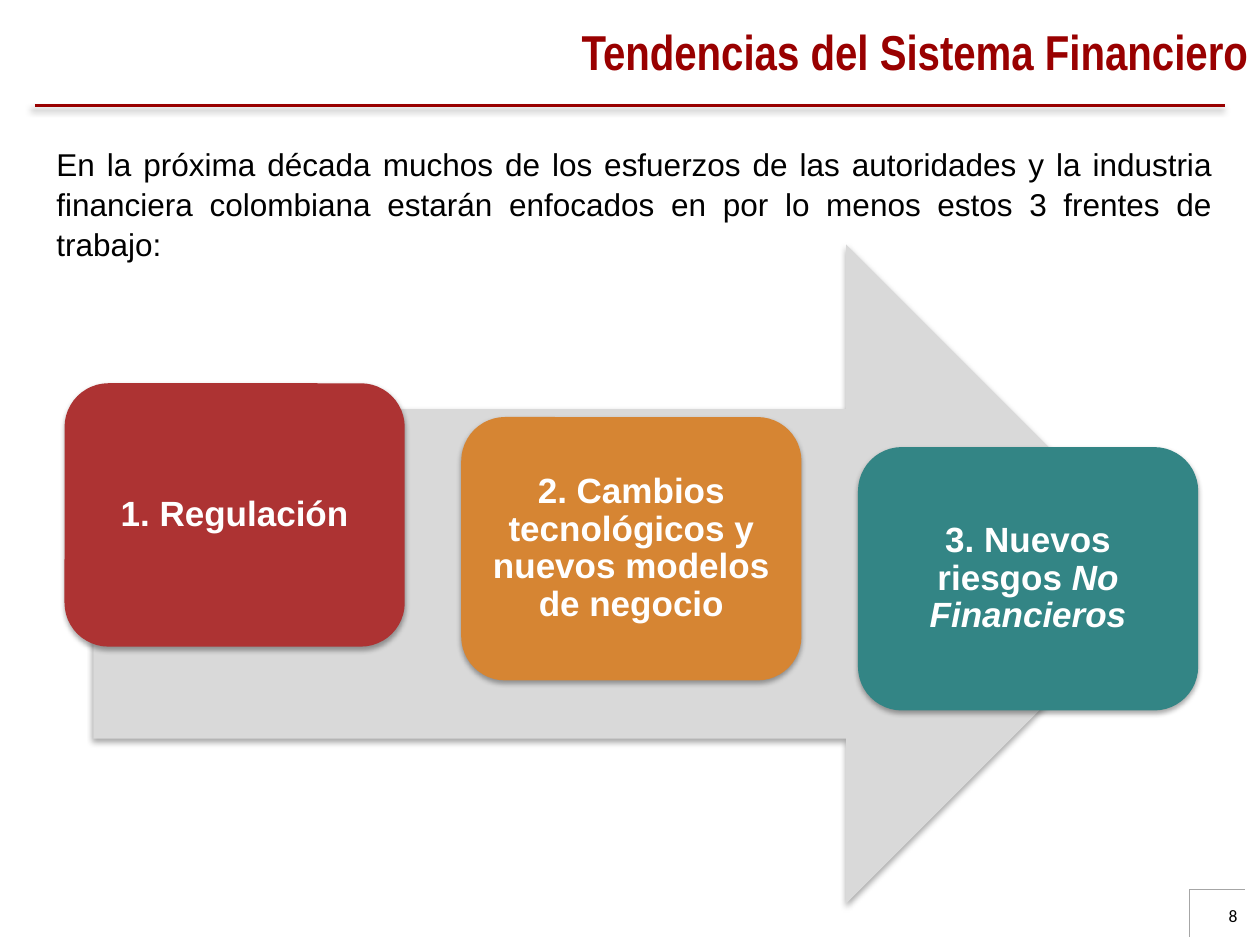
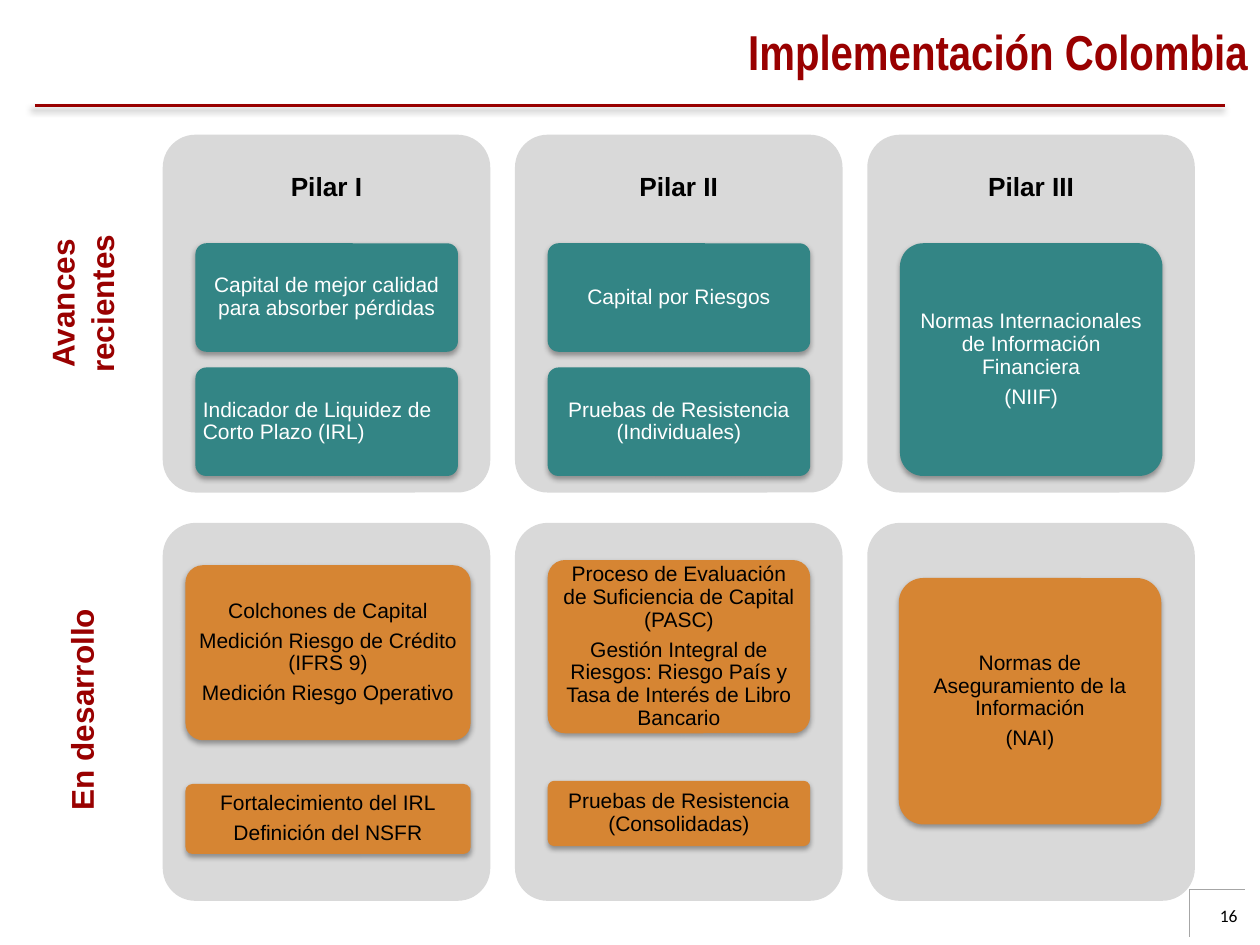
from lxml import etree
from pptx import Presentation
from pptx.dml.color import RGBColor
from pptx.enum import shapes, text
from pptx.oxml import ns
from pptx.util import Pt

RED = RGBColor(0x99, 0x00, 0x00)
BRICK = RGBColor(0xAD, 0x33, 0x33)
ORANGE = RGBColor(0xD6, 0x85, 0x33)
TEAL = RGBColor(0x33, 0x85, 0x85)
PALE_GRAY = RGBColor(0xD9, 0xD9, 0xD9)
RULE_GRAY = RGBColor(0xA6, 0xA6, 0xA6)
BLACK = RGBColor(0, 0, 0)
WHITE = RGBColor(255, 255, 255)
LEFT, CENTER = text.PP_ALIGN.LEFT, text.PP_ALIGN.CENTER
RIGHT, JUSTIFY = text.PP_ALIGN.RIGHT, text.PP_ALIGN.JUSTIFY
MIDDLE = text.MSO_ANCHOR.MIDDLE

# Shadows: opacity %, blur, distance (points), direction (degrees)
CARD_SHADOW = (35, 3.1, 1.8, 90)
RULE_SHADOW = (40, 4, 3, 135)

# ---- Content ----
TRENDS_TITLE = "Tendencias del Sistema Financiero"
TRENDS_INTRO = (
    "En la próxima década muchos de los esfuerzos de las autoridades y la "
    "industria financiera colombiana estarán enfocados en por lo menos estos "
    "3 frentes de trabajo:"
)
# Top, fill, plain text, italic text
FRONTS = [
    (219, BRICK, "1. Regulación", ""),
    (238.3, ORANGE, "2. Cambios tecnológicos y nuevos modelos de negocio", ""),
    (255.5, TEAL, "3. Nuevos riesgos ", "No Financieros"),
]

PILLARS_TITLE = "Implementación Colombia"
PILLARS = ["Pilar I", "Pilar II", "Pilar III"]
# Cards per pillar: inset from the panel, top, width, height, paragraphs
ADVANCES = [
    [(18.7, 139, 150, 62, ["Capital de mejor calidad para absorber pérdidas"]),
     (18.7, 210, 150, 62, ["Indicador de Liquidez de Corto Plazo (IRL)"])],
    [(18.7, 139, 150, 62, ["Capital por Riesgos"]),
     (18.7, 210, 150, 62, ["Pruebas de Resistencia (Individuales)"])],
    [(18.7, 139, 150, 133,
      ["Normas Internacionales de Información Financiera", "(NIIF)"])],
]
DEVELOPMENTS = [
    [(13, 323, 163, 100,
      ["Colchones de Capital", "Medición Riesgo de Crédito (IFRS 9)",
       "Medición Riesgo Operativo"]),
     (13, 448, 163, 40, ["Fortalecimiento del IRL", "Definición del NSFR"])],
    [(18.7, 320, 150, 99,
      ["Proceso de Evaluación de Suficiencia de Capital (PASC)",
       "Gestión Integral de Riesgos: Riesgo País y Tasa de Interés de Libro "
       "Bancario"]),
     (18.7, 446.2, 150, 37.3, ["Pruebas de Resistencia (Consolidadas)"])],
    [(18, 330.3, 150, 140.8,
      ["Normas de Aseguramiento de la Información", "(NAI)"])],
]
LEFT_ALIGNED = {"Indicador de Liquidez de Corto Plazo (IRL)"}
# Panel top, panel height, card fill, text colour, cards
PANEL_ROWS = [
    (77, 204.5, TEAL, WHITE, ADVANCES),
    (298.8, 216, ORANGE, BLACK, DEVELOPMENTS),
]
# Box of each vertical label and its lines
ROW_LABELS = [
    ((20, 100, 58.5, 147), ["Avances", "recientes"]),
    ((31, 332, 36, 147), ["En desarrollo"]),
]


# ---- Drawing helpers ----
def add_shadow(properties, shadow=None):
    """Set the effect list of a shape: empty, or one outer shadow."""
    effects = properties.find(ns.qn("a:effectLst"))
    if effects is None:
        effects = etree.SubElement(properties, ns.qn("a:effectLst"))
    if shadow:
        opacity, blur, distance, direction = shadow
        outer = etree.SubElement(
            effects, ns.qn("a:outerShdw"), blurRad=str(int(Pt(blur))),
            dist=str(int(Pt(distance))), dir=str(direction * 60000),
            rotWithShape="0")
        color = etree.SubElement(outer, ns.qn("a:srgbClr"), val="000000")
        etree.SubElement(color, ns.qn("a:alpha"), val=str(opacity * 1000))


def add_rule(slide, x1, y1, x2, y2, color, width, shadow=None):
    rule = slide.shapes.add_connector(
        shapes.MSO_CONNECTOR.STRAIGHT, Pt(x1), Pt(y1), Pt(x2), Pt(y2))
    rule.line.color.rgb = color
    rule.line.width = Pt(width)
    add_shadow(rule._element.spPr, shadow)


def add_block(slide, kind, box, fill, shadow=None, rounding=None):
    shape = slide.shapes.add_shape(kind, *map(Pt, box))
    shape.fill.solid()
    shape.fill.fore_color.rgb = fill
    shape.line.fill.background()
    shape.shadow.inherit = False
    add_shadow(shape._element.spPr, shadow)
    if rounding is not None:
        shape.adjustments[0] = rounding
    return shape


def write(shape, lines, size, color, font="Arial", bold=False, align=CENTER,
          anchor=MIDDLE, margin=None, spacing=None, after=0):
    frame = shape.text_frame
    frame.word_wrap = True
    frame.vertical_anchor = anchor
    if margin is not None:
        frame.margin_left = frame.margin_right = Pt(margin)
        frame.margin_top = frame.margin_bottom = Pt(margin)
    for index, line in enumerate(lines):
        paragraph = frame.paragraphs[0] if index == 0 else frame.add_paragraph()
        paragraph.add_run().text = line
        paragraph.alignment = align
        paragraph.line_spacing = spacing
        paragraph.space_after = Pt(after)
        paragraph.font.name = font
        paragraph.font.size = Pt(size)
        paragraph.font.bold = bold
        paragraph.font.color.rgb = color
    return frame


def add_text(slide, box, lines, size, color, **style):
    return write(slide.shapes.add_textbox(*map(Pt, box)), lines, size, color,
                 **style)


def add_base_slide(presentation, title):
    """Slide with the red rule, the page corner and the title."""
    slide = presentation.slides.add_slide(presentation.slide_layouts[6])
    add_rule(slide, 20, 60.3, 700, 60.3, RED, 2, RULE_SHADOW)
    add_rule(slide, 680, 508.3, 711.4, 508.3, RULE_GRAY, 0.25)
    add_rule(slide, 679.7, 508.3, 679.7, 535.7, RULE_GRAY, 0.25)
    add_text(slide, (264, 3.6, 456, 51), [title], 28, RED,
             font="Arial Narrow", bold=True, align=RIGHT)
    return slide


def add_page_number(slide, number):
    add_text(slide, (669.6, 513.4, 44.6, 28.8), [number], 10, BLACK,
             font="Calibri", align=RIGHT, anchor=text.MSO_ANCHOR.TOP)


# ---- Slides ----
def build_trends(presentation):
    slide = add_base_slide(presentation, TRENDS_TITLE)
    add_block(slide, shapes.MSO_SHAPE.RIGHT_ARROW, (53.3, 139.7, 618.5, 376.6),
              PALE_GRAY, CARD_SHADOW)
    for index, (top, fill, plain, italic) in enumerate(FRONTS):
        card = add_block(slide, shapes.MSO_SHAPE.ROUNDED_RECTANGLE,
                         (36.9 + 226.7 * index, top, 194.4, 150.5),
                         fill, CARD_SHADOW)
        frame = write(card, [plain], 20, WHITE, bold=True, margin=6,
                      spacing=0.9, after=7)
        if italic:
            run = frame.paragraphs[0].add_run()
            run.text = italic
            run.font.italic = True
    add_page_number(slide, "8")
    add_text(slide, (25.2, 78.5, 674.6, 72.7), [TRENDS_INTRO], 18, BLACK,
             align=JUSTIFY, anchor=text.MSO_ANCHOR.TOP, spacing=1.05)


def build_pillars(presentation):
    slide = add_base_slide(presentation, PILLARS_TITLE)
    rounded = shapes.MSO_SHAPE.ROUNDED_RECTANGLE
    panel_lefts = [93 + 201.3 * index for index in range(len(PILLARS))]

    # Panels and their cards
    for top, height, fill, color, columns in PANEL_ROWS:
        for left, cards in zip(panel_lefts, columns):
            add_block(slide, rounded, (left, top, 187.2, height), PALE_GRAY,
                      rounding=0.1)
            for inset, card_top, width, card_height, lines in cards:
                card = add_block(slide, rounded,
                                 (left + inset, card_top, width, card_height),
                                 fill, CARD_SHADOW, 0.1)
                align = LEFT if lines[0] in LEFT_ALIGNED else CENTER
                write(card, lines, 12, color, align=align, margin=2.4,
                      spacing=0.9, after=4.2)

    # Pillar headings
    for left, pillar in zip(panel_lefts, PILLARS):
        add_text(slide, (left, 77, 187.2, 61.2), [pillar], 15, BLACK,
                 bold=True, margin=4.5, spacing=0.9)

    # Vertical row labels
    for box, lines in ROW_LABELS:
        frame = add_text(slide, box, lines, 18, RED, bold=True, spacing=1.05,
                         anchor=text.MSO_ANCHOR.TOP)
        frame._txBody.bodyPr.set("vert", "vert270")
    add_page_number(slide, "16")


def main():
    presentation = Presentation()
    presentation.slide_width, presentation.slide_height = Pt(720), Pt(540)
    build_trends(presentation)
    build_pillars(presentation)
    presentation.save("out.pptx")


if __name__ == "__main__":
    main()
